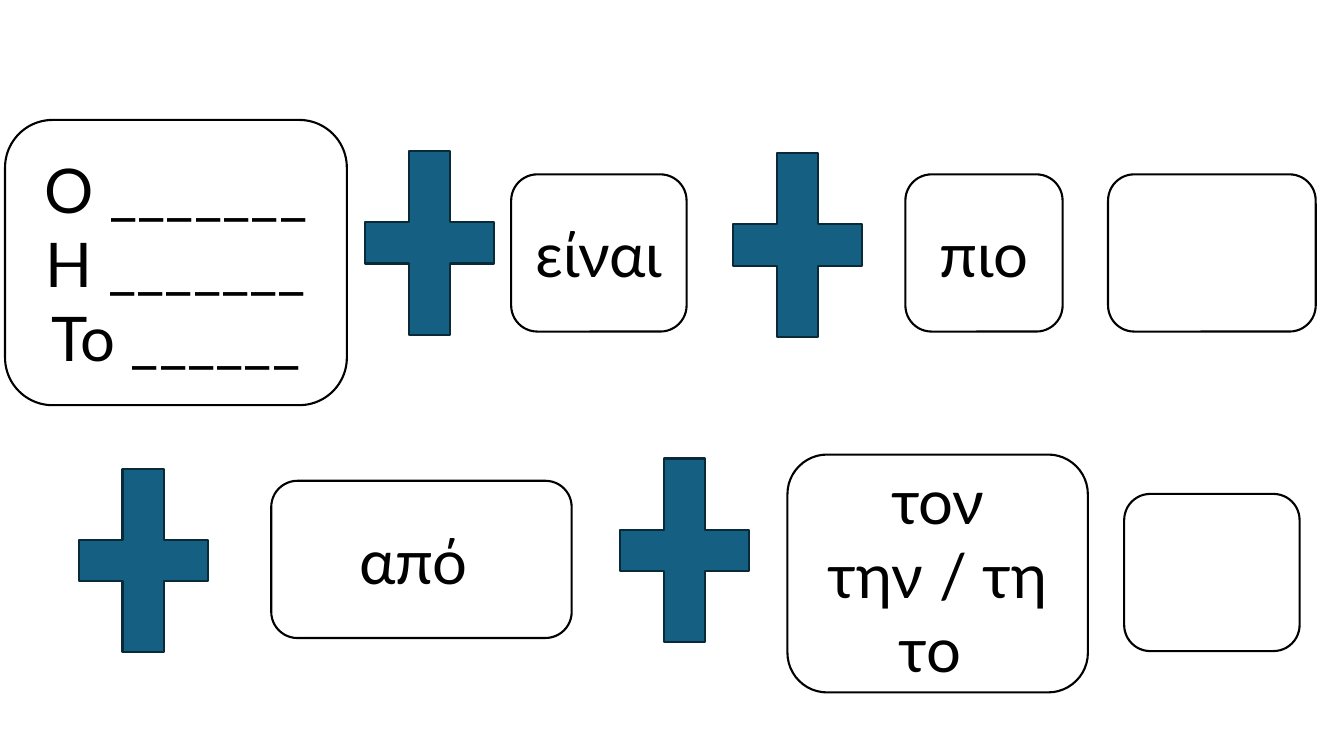
from pptx import Presentation
from pptx.dml.color import RGBColor
from pptx.enum.shapes import MSO_SHAPE as Shape
from pptx.enum.text import MSO_ANCHOR as Anchor, PP_ALIGN as Align
from pptx.util import Inches, Pt

BLACK = RGBColor(0x00, 0x00, 0x00)
WHITE = RGBColor(0xFF, 0xFF, 0xFF)
TEAL = RGBColor(0x15, 0x60, 0x82)
DARK_TEAL = RGBColor(0x09, 0x2A, 0x39)

PLUS_SIZE = (1.74, 2.48)
CARD_HEIGHT = 1.56

PLUS_SPOTS = [(3.39, 1.17), (7.04, 1.19), (0.55, 4.32), (5.92, 4.22)]

# left, top, width, height, wording
SENTENCE_CARDS = [
    (0.05, 1.19, 3.39, 2.83, "Ο _______\nΗ _______\nΤο ______"),
    (5.07, 1.73, 1.74, CARD_HEIGHT, "είναι"),
    (8.98, 1.73, 1.56, CARD_HEIGHT, "πιο"),
    (10.99, 1.73, 2.06, CARD_HEIGHT, ""),
    (2.69, 4.77, 2.98, CARD_HEIGHT, "από "),
    (7.81, 4.51, 2.98, 2.36, "τον\nτην / τη\nτο "),
    (11.15, 4.9, 1.74, CARD_HEIGHT, ""),
]


class SentencePattern:
    font_name = "Lato"
    font_size = Pt(44)
    line_width = Pt(1.5)

    def __init__(self, slide):
        self.slide = slide

    def outlined(self, kind, box, fill, line):
        """Add a flat preset shape; box is left, top, width, height in inches."""
        shape = self.slide.shapes.add_shape(kind, *map(Inches, box))
        shape.shadow.inherit = False
        shape.fill.solid()
        shape.fill.fore_color.rgb = fill
        shape.line.color.rgb = line
        shape.line.width = self.line_width
        return shape

    def plus(self, left, top):
        self.outlined(Shape.MATH_PLUS, (left, top, *PLUS_SIZE), TEAL, DARK_TEAL)

    def card(self, left, top, width, height, wording):
        card = self.outlined(Shape.ROUNDED_RECTANGLE, (left, top, width, height),
                             WHITE, BLACK)
        if not wording:
            return
        frame = card.text_frame
        frame.text = wording
        frame.word_wrap = True
        frame.vertical_anchor = Anchor.MIDDLE
        for paragraph in frame.paragraphs:
            paragraph.alignment = Align.CENTER
            for run in paragraph.runs:
                run.font.name = self.font_name
                run.font.size = self.font_size
                run.font.color.rgb = BLACK


def main():
    deck = Presentation()
    deck.slide_width = Inches(13.33)
    deck.slide_height = Inches(7.5)
    pattern = SentencePattern(deck.slides.add_slide(deck.slide_layouts[6]))
    for spot in PLUS_SPOTS:
        pattern.plus(*spot)
    for card in SENTENCE_CARDS:
        pattern.card(*card)
    deck.save("out.pptx")


if __name__ == "__main__":
    main()
